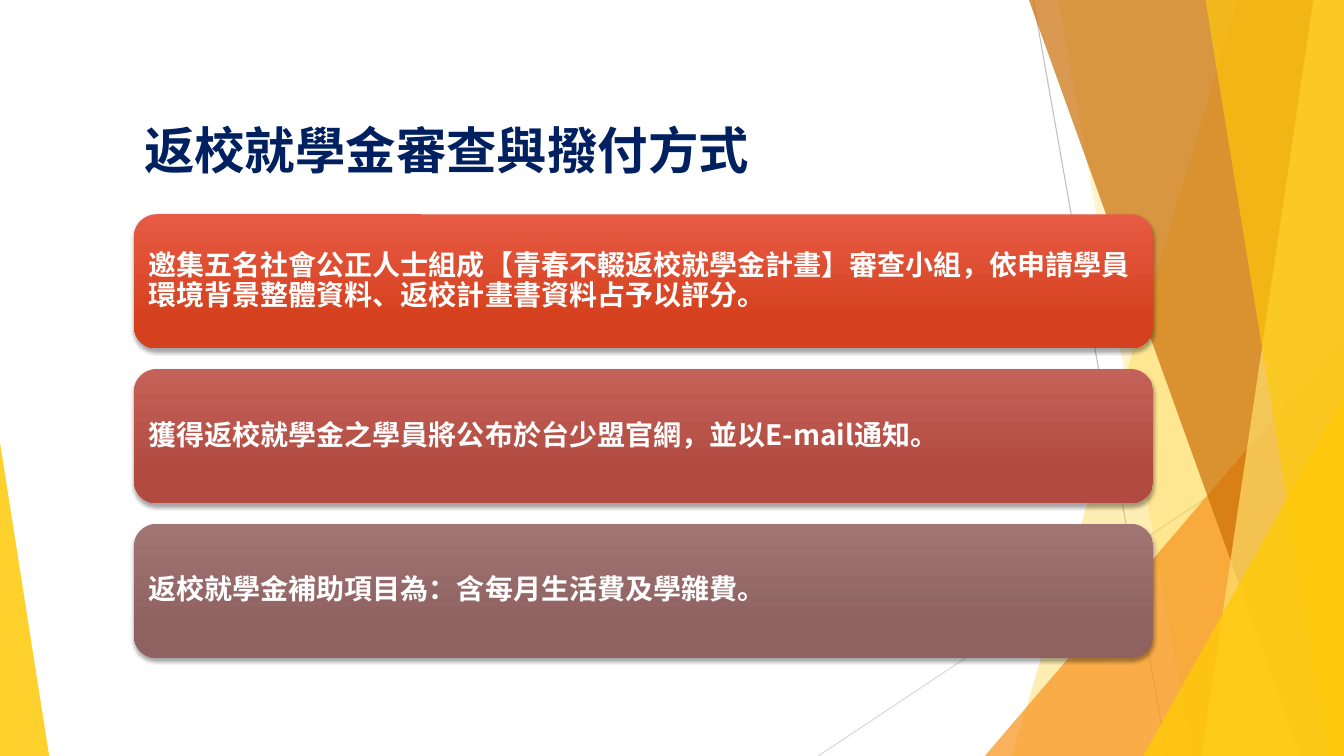
from collections import namedtuple
from dataclasses import dataclass

from lxml import etree
from pptx import Presentation
from pptx.dml.color import RGBColor
from pptx.enum import shapes, text
from pptx.oxml import ns
from pptx.util import Cm, Pt

Box = namedtuple("Box", "left top width height")


@dataclass(frozen=True)
class Theme:
    font: str = "Noto Sans CJK SC"
    title_size: int = 36
    card_size: int = 20
    title: str = "002060"
    card_text: str = "FFFFFF"
    shadow: str = "000000"
    gold: str = "FFCA08"
    pale_gold: str = "FFDF6B"
    orange: str = "F8931D"
    brown: str = "CA6F06"
    dark_line: str = "BFBFBF"
    light_line: str = "D9D9D9"
    cards: tuple = (("E75B45", "D5411E"), ("C46259", "B14A40"), ("A27575", "8F6161"))


THEME = Theme()
PAGE = Box(0, 0, 33.87, 19.05)
TITLE = "返校就學金審查與撥付方式"
CARDS = (
    "邀集五名社會公正人士組成【青春不輟返校就學金計畫】審查小組，依申請學員環境背景整體資料、返校計畫書資料占予以評分。",
    "獲得返校就學金之學員將公布於台少盟官網，並以E-mail通知。",
    "返校就學金補助項目為：含每月生活費及學雜費。",
)


def add_element(parent, tag, **attributes):
    return etree.SubElement(parent, ns.qn(tag), attributes)


def set_font(para, size, color):
    para.font.size = Pt(size)
    para.font.bold = True
    para.font.color.rgb = RGBColor.from_string(color)
    para.font.name = THEME.font
    defaults = para._p.pPr.find(ns.qn("a:defRPr"))
    add_element(defaults, "a:ea", typeface=THEME.font)


def paint(shape, color, opacity):
    """Give a shape a plain, see-through fill without line or shadow."""
    shape.shadow.inherit = False
    shape.line.fill.background()
    shape.fill.solid()
    shape.fill.fore_color.rgb = RGBColor.from_string(color)
    color_node = shape._element.spPr.find(ns.qn("a:solidFill"))[0]
    add_element(color_node, "a:alpha", val=str(opacity * 1000))


def add_hairline(page, start, end, color):
    line = page.shapes.add_connector(
        shapes.MSO_CONNECTOR.STRAIGHT, *(Cm(value) for value in start + end))
    line.line.color.rgb = RGBColor.from_string(color)
    line.line.width = Pt(0.75)
    add_element(line._element.spPr, "a:effectLst")


def add_band(page, box, top_x, bottom_x, color, opacity):
    """Fill the box to the right of a slanted edge."""
    right, bottom = box.left + box.width, box.top + box.height
    corners = ((right, box.top), (right, bottom), (box.left + bottom_x, bottom))
    builder = page.shapes.build_freeform(Cm(box.left + top_x), Cm(box.top))
    builder.add_line_segments([(Cm(x), Cm(y)) for x, y in corners])
    paint(builder.convert_to_shape(), color, opacity)


def add_corner(page, box, peak, color, opacity):
    """Fill the box with a triangle whose tip is at peak, 0 left to 1 right."""
    triangle = page.shapes.add_shape(
        shapes.MSO_SHAPE.ISOSCELES_TRIANGLE, *(Cm(value) for value in box))
    triangle.adjustments[0] = peak
    paint(triangle, color, opacity)


def add_backdrop(page, box):
    left, top, width, height = box
    right, bottom = left + width, top + height

    def right_corner(corner_width, corner_height):
        return Box(right - corner_width, bottom - corner_height, corner_width, corner_height)

    add_hairline(page, (left + 26.04, top), (left + 29.41, bottom), THEME.dark_line)
    add_hairline(page, (right, top + 10.24), (left + 20.62, bottom), THEME.light_line)
    add_band(page, box, 31.19, 25.5, THEME.gold, 30)
    add_band(page, box, 26.67, 30.05, THEME.gold, 20)
    add_corner(page, right_corner(9.05, 10.59), 1, THEME.orange, 72)
    add_band(page, box, 25.93, 32.79, THEME.brown, 70)
    add_band(page, box, 33.1, 30.28, THEME.pale_gold, 70)
    add_band(page, box, 30.38, 33.48, THEME.gold, 65)
    add_corner(page, right_corner(5.06, 9.07), 1, THEME.gold, 80)
    add_corner(page, Box(left, bottom - 7.9, 1.24, 7.9), 0, THEME.gold, 85)


def add_title(page, box):
    title = page.shapes.title
    title.left, title.top, title.width, title.height = (Cm(value) for value in box)
    frame = title.text_frame
    frame.text = TITLE
    frame.word_wrap = True
    frame.auto_size = text.MSO_AUTO_SIZE.NONE
    frame.vertical_anchor = text.MSO_ANCHOR.TOP
    para = frame.paragraphs[0]
    para.alignment = text.PP_ALIGN.LEFT
    set_font(para, THEME.title_size, THEME.title)


def add_card(page, box, words, gradient):
    card = page.shapes.add_shape(
        shapes.MSO_SHAPE.ROUNDED_RECTANGLE, *(Cm(value) for value in box))
    card.line.fill.background()
    card.fill.gradient()
    card.fill.gradient_angle = 270
    for stop, color, position in zip(card.fill.gradient_stops, gradient, (0, 0.78)):
        stop.color.rgb = RGBColor.from_string(color)
        stop.position = position

    card.shadow.inherit = False
    effects = card._element.spPr.find(ns.qn("a:effectLst"))
    shadow = add_element(effects, "a:outerShdw", blurRad=str(Pt(3)), dist=str(Pt(2)),
                         dir="5400000", rotWithShape="0")
    shade = add_element(shadow, "a:srgbClr", val=THEME.shadow)
    add_element(shade, "a:alpha", val="35000")

    frame = card.text_frame
    frame.text = words
    frame.word_wrap = True
    frame.vertical_anchor = text.MSO_ANCHOR.MIDDLE
    frame.margin_left = frame.margin_right = Cm(0.2)
    frame.margin_top = frame.margin_bottom = Cm(0.2)
    para = frame.paragraphs[0]
    para.alignment = text.PP_ALIGN.LEFT
    para.line_spacing = 0.9
    set_font(para, THEME.card_size, THEME.card_text)


def add_cards(page, box, gap=0.52):
    height = (box.height - gap * (len(CARDS) - 1)) / len(CARDS)
    for index, (words, gradient) in enumerate(zip(CARDS, THEME.cards)):
        top = box.top + index * (height + gap)
        add_card(page, Box(box.left, top, box.width, height), words, gradient)


def main():
    deck = Presentation()
    deck.slide_width, deck.slide_height = Cm(PAGE.width), Cm(PAGE.height)
    page = deck.slides.add_slide(deck.slide_layouts.get_by_name("Title Only"))
    add_backdrop(page, PAGE)
    add_title(page, Box(3.38, 2.87, 20.57, 3.68))
    add_cards(page, Box(3.38, 5.4, 25.68, 11.18))
    deck.save("out.pptx")


if __name__ == "__main__":
    main()
